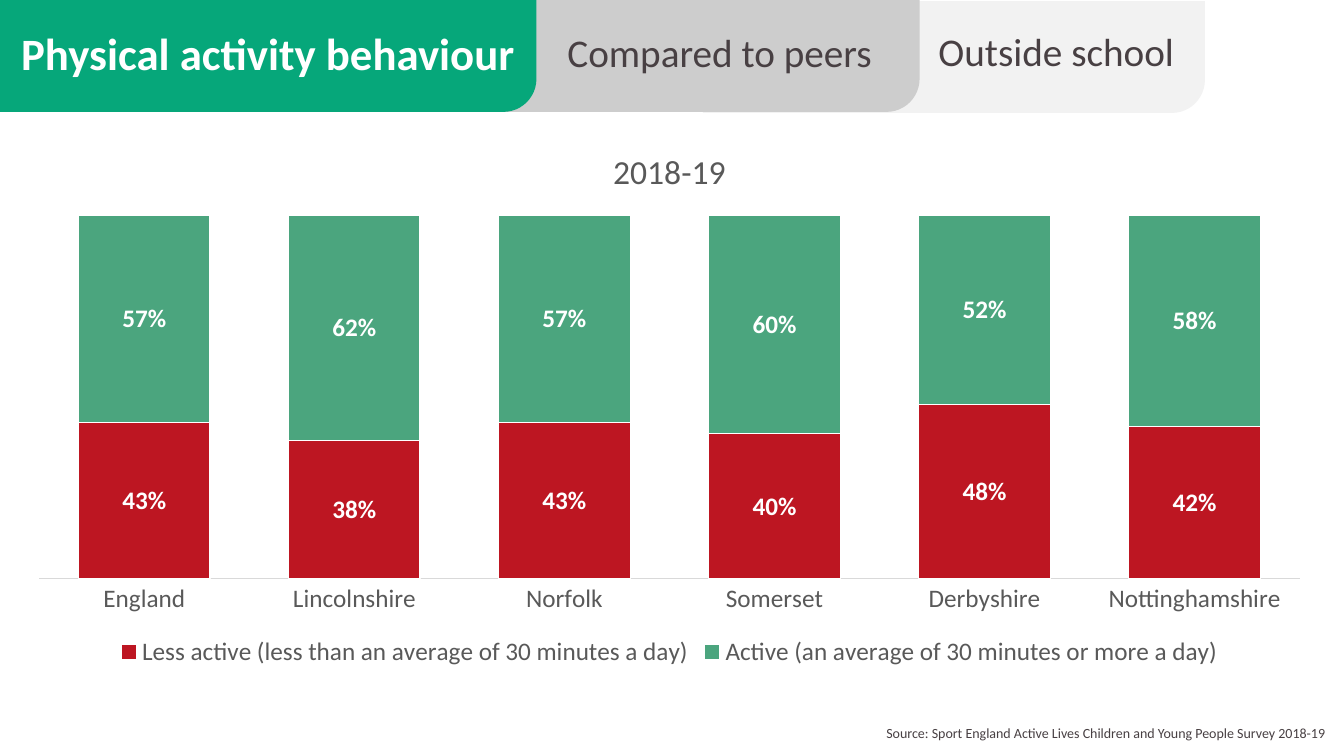
from pptx import Presentation
from pptx.chart.data import CategoryChartData
from pptx.dml.color import RGBColor
from pptx.enum.chart import XL_CHART_TYPE as ChartType, XL_LEGEND_POSITION as LegendPosition
from pptx.enum.chart import XL_TICK_LABEL_POSITION as LabelPosition, XL_TICK_MARK as TickMark
from pptx.enum.shapes import MSO_SHAPE as Shape
from pptx.enum.text import MSO_ANCHOR as Anchor, MSO_AUTO_SIZE as AutoSize, PP_ALIGN as Align
from pptx.util import Inches, Pt

FONT = "Calibri"
COLOURS = {
    "green": "06A77A", "grey": "CDCDCD", "pale": "F2F2F2", "white": "FFFFFF",
    "ink": "484043", "label": "595959", "axis": "D9D9D9",
    "less": "BD1622", "active": "4BA57E",
}
AREAS = ["England", "Lincolnshire", "Norfolk", "Somerset", "Derbyshire", "Nottinghamshire"]
ACTIVITY = [
    ("Less active (less than an average of 30 minutes a day)", "less",
     [0.43, 0.38, 0.43, 0.40, 0.48, 0.42]),
    ("Active (an average of 30 minutes or more a day)", "active",
     [0.57, 0.62, 0.57, 0.60, 0.52, 0.58]),
]


def colour(name):
    return RGBColor.from_string(COLOURS[name])


def style_font(font, size, tint, bold=False):
    font.name = FONT
    font.size = Pt(size)
    font.bold = bold
    font.color.rgb = colour(tint)


def write_text(frame, text, size, tint, bold=False, align=Align.LEFT, wrap=True):
    frame.word_wrap = wrap
    frame.auto_size = AutoSize.NONE
    frame.vertical_anchor = Anchor.TOP
    para = frame.paragraphs[0]
    para.alignment = align
    span = para.add_run()
    span.text = text
    style_font(span.font, size, tint, bold)


def place(shape, box):
    shape.left, shape.top, shape.width, shape.height = [Inches(length) for length in box]


def add_tab(page, box, fill):
    tab = page.shapes.add_shape(Shape.ROUND_1_RECTANGLE, *[Inches(length) for length in box])
    tab.adjustments[0] = 0.295
    tab.rotation = 180
    tab._element.spPr.xfrm.set("flipH", "1")
    tab.shadow.inherit = False
    tab.fill.solid()
    tab.fill.fore_color.rgb = colour(fill)
    tab.line.fill.background()


def add_label(page, box, text, size, **text_format):
    label = page.shapes.add_textbox(*[Inches(length) for length in box])
    write_text(label.text_frame, text, size, "ink", **text_format)


def add_tabs(page, left, top, height):
    add_tab(page, (left + 6.97, top + 0.01, 4.98, height), "pale")
    add_tab(page, (left + 4.14, top, 4.98, height), "grey")
    add_label(page, (left + 5.53, top + 0.23, 3.37, 0.57), "Compared to peers", 28)
    add_tab(page, (left, top, 5.32, height), "green")
    add_label(page, (left + 9.21, top + 0.22, 2.64, 0.57), "Outside school", 28, wrap=False)
    title = page.shapes.title
    place(title, (left + 0.11, top + 0.21, 5.32, 0.64))
    write_text(title.text_frame, "Physical activity behaviour", 32, "white", bold=True)
    page.shapes._spTree.append(title._element)


def format_axes(chart):
    areas = chart.category_axis
    areas.major_tick_mark = TickMark.NONE
    areas.format.line.color.rgb = colour("axis")
    areas.format.line.width = Pt(0.75)
    style_font(areas.tick_labels.font, 18, "label")
    shares = chart.value_axis
    shares.minimum_scale = 0
    shares.maximum_scale = 1
    shares.has_major_gridlines = False
    shares.tick_label_position = LabelPosition.NONE
    shares.visible = False


def format_series(series, tint):
    series.format.fill.solid()
    series.format.fill.fore_color.rgb = colour(tint)
    series.format.line.color.rgb = colour("white")
    series.format.line.width = Pt(0.75)
    labels = series.data_labels
    labels.show_value = True
    labels.number_format = "0%"
    labels.number_format_is_linked = False
    style_font(labels.font, 18, "white", bold=True)


def add_activity_chart(page, box):
    data = CategoryChartData(number_format="0%")
    data.categories = AREAS
    for name, _, shares in ACTIVITY:
        data.add_series(name, shares)
    chart = page.shapes.add_chart(
        ChartType.COLUMN_STACKED, *[Inches(length) for length in box], data).chart
    chart.font.name = FONT
    chart.font.size = Pt(18)
    chart.has_title = True
    heading = chart.chart_title.text_frame.paragraphs[0].add_run()
    heading.text = "2018-19"
    style_font(heading.font, 24, "label")
    chart.chart_title.include_in_layout = False
    chart.has_legend = True
    chart.legend.position = LegendPosition.BOTTOM
    chart.legend.include_in_layout = False
    style_font(chart.legend.font, 18, "label")
    format_axes(chart)
    plot = chart.plots[0]
    plot.gap_width = 60
    plot.overlap = 100
    plot.vary_by_categories = False
    for series, (_, tint, _) in zip(plot.series, ACTIVITY):
        format_series(series, tint)


def main():
    deck = Presentation()
    deck.slide_width = Inches(13.33)
    deck.slide_height = Inches(7.5)
    page = deck.slides.add_slide(deck.slide_layouts[5])
    add_label(page, (5.95, 7.14, 7.29, 0.27),
              "Source: Sport England Active Lives Children and Young People Survey 2018-19",
              10, align=Align.RIGHT)
    add_tabs(page, 0, 0, 1.11)
    add_activity_chart(page, (0.13, 1.26, 13.02, 5.41))
    deck.save("out.pptx")


if __name__ == "__main__":
    main()
